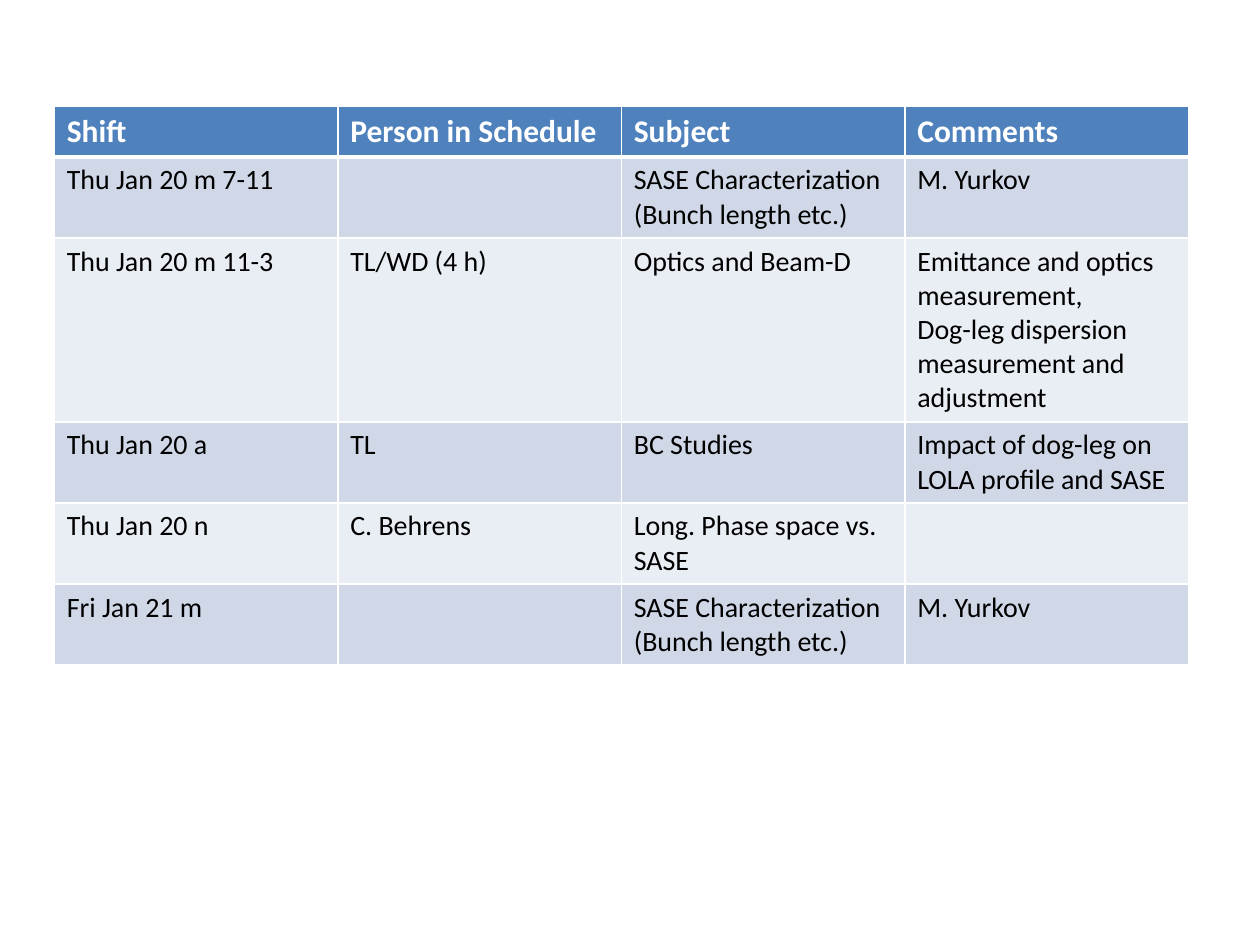
from lxml.etree import SubElement
from pptx import Presentation
from pptx.dml.color import RGBColor
from pptx.oxml.ns import qn
from pptx.util import Pt

HEADER_FILL = "4F81BD"
BAND_FILLS = ["D0D8E8", "E9EDF4"]
WHITE = "FFFFFF"
BLACK = "000000"

SCHEDULE = [
    ["Shift", "Person in Schedule", "Subject", "Comments"],
    ["Thu Jan 20 m 7-11", "", "SASE Characterization (Bunch length etc.)", "M. Yurkov"],
    ["Thu Jan 20 m 11-3", "TL/WD (4 h)", "Optics and Beam-D",
     "Emittance and optics measurement,\nDog-leg dispersion\nmeasurement and adjustment"],
    ["Thu Jan 20 a", "TL", "BC Studies", "Impact of dog-leg on LOLA profile and SASE"],
    ["Thu Jan 20 n", "C. Behrens", "Long. Phase space vs. SASE", ""],
    ["Fri Jan 21 m", "", "SASE Characterization (Bunch length etc.)", "M. Yurkov"],
]


def write_cell(cell, text, *, size, color, bold, fill):
    cell.text = text
    for para in cell.text_frame.paragraphs:
        para.font.size = Pt(size)
        for span in para.runs:
            span.font.name = "Calibri"
            span.font.size = Pt(size)
            span.font.bold = bold
            span.font.color.rgb = RGBColor.from_string(color)
    cell.fill.solid()
    cell.fill.fore_color.rgb = RGBColor.from_string(fill)


def add_borders(cell, top, bottom):
    """Draw white cell edges; must run before the fill is set, as the schema orders them."""
    properties = cell._tc.get_or_add_tcPr()
    for side, width in (("L", 1), ("R", 1), ("T", top), ("B", bottom)):
        line = SubElement(properties, qn(f"a:ln{side}"), w=str(Pt(width)))
        SubElement(SubElement(line, qn("a:solidFill")), qn("a:srgbClr"), val=WHITE)


deck = Presentation()
deck.slide_width, deck.slide_height = Pt(720), Pt(540)
page = deck.slides.add_slide(deck.slide_layouts[6])

# Rows start at one height and grow with their text.
row_height = 29.2
table = page.shapes.add_table(
    len(SCHEDULE), 4, Pt(31), Pt(60.5), Pt(648), Pt(row_height * len(SCHEDULE))
).table
for column in table.columns:
    column.width = Pt(162)

for row_index, entries in enumerate(SCHEDULE):
    table.rows[row_index].height = Pt(row_height)
    is_header = row_index == 0
    for column_index, text in enumerate(entries):
        cell = table.cell(row_index, column_index)
        add_borders(cell, top=3 if row_index == 1 else 1, bottom=3 if is_header else 1)
        write_cell(
            cell, text,
            size=18 if is_header else 16,
            color=WHITE if is_header else BLACK,
            bold=is_header,
            fill=HEADER_FILL if is_header else BAND_FILLS[(row_index - 1) % 2],
        )

deck.save("out.pptx")
